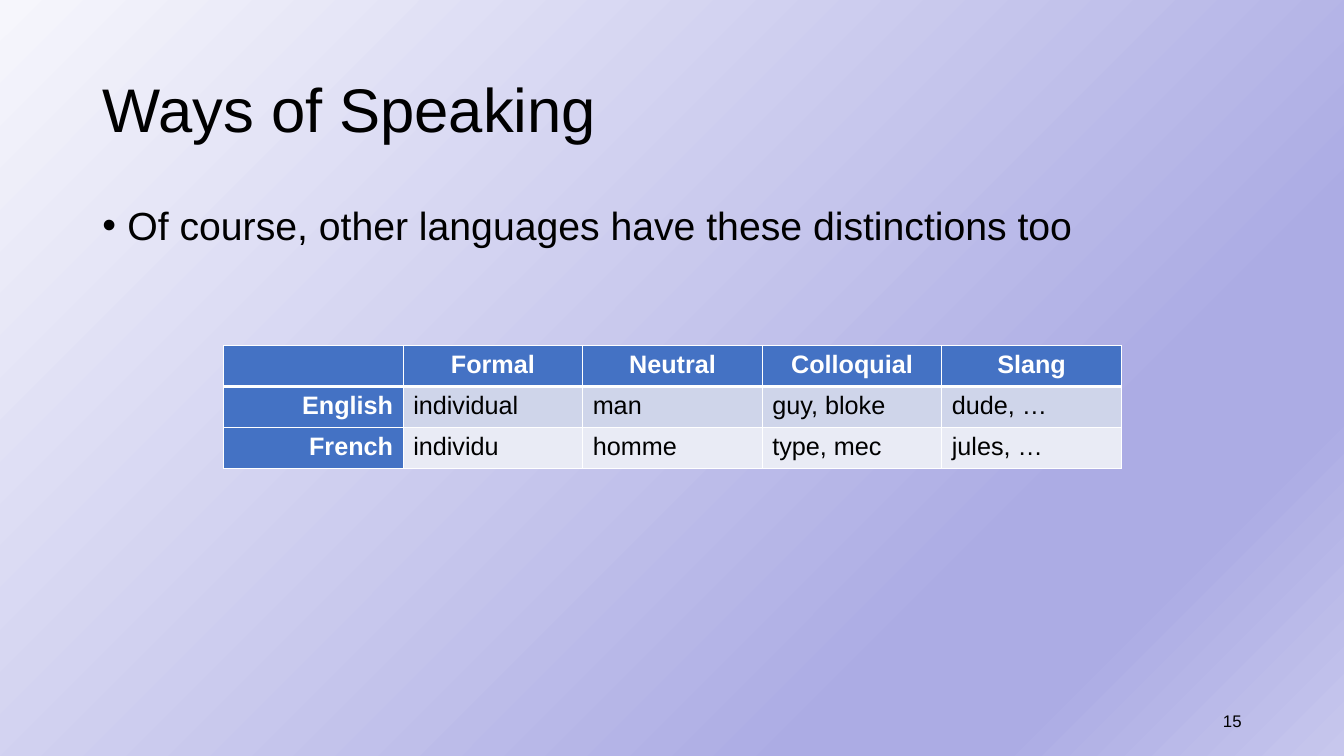
from lxml import etree
from pptx import Presentation
from pptx.dml.color import RGBColor
from pptx.enum.text import MSO_ANCHOR, PP_ALIGN
from pptx.oxml.ns import qn
from pptx.util import Pt

PX = 9525  # EMU per px, 96 px to the inch
LEFT, CENTER, RIGHT = PP_ALIGN.LEFT, PP_ALIGN.CENTER, PP_ALIGN.RIGHT
TOP, MIDDLE = MSO_ANCHOR.TOP, MSO_ANCHOR.MIDDLE

BLACK = RGBColor(0x00, 0x00, 0x00)
WHITE = RGBColor(0xFF, 0xFF, 0xFF)
BLUE = RGBColor(0x44, 0x72, 0xC4)
BAND_DARK = RGBColor(0xCF, 0xD5, 0xEA)
BAND_LIGHT = RGBColor(0xE9, 0xEB, 0xF5)
MIST = RGBColor(0xF6, 0xF6, 0xFC)
LILAC = RGBColor(0xAC, 0xAC, 0xE4)
PALE_LILAC = RGBColor(0xC7, 0xC7, 0xED)


def write(tf, text, size, color=BLACK, bold=False, align=LEFT, spacing=None):
    p = tf.paragraphs[0]
    p.alignment = align
    p.line_spacing = spacing
    r = p.add_run()
    r.text = text
    r.font.name = "Arial"
    r.font.size = Pt(size)
    r.font.bold = bold
    r.font.color.rgb = color
    return p


def add_text(box, text, size, anchor=TOP, **fmt):
    tf = s.shapes.add_textbox(*(v * PX for v in box)).text_frame
    tf.word_wrap = True
    tf.vertical_anchor = anchor
    return write(tf, text, size, **fmt)


prs = Presentation()
prs.slide_width, prs.slide_height = 1280 * PX, 720 * PX
s = prs.slides.add_slide(prs.slide_layouts[6])

# Background gradient
fill = s.background.fill
fill.gradient()
fill.gradient_angle = 315
stops = s.element.find(".//" + qn("a:gsLst"))
for stop in list(stops):
    stops.remove(stop)
for pos, color in [(0, MIST), (74, LILAC), (83, LILAC), (100, PALE_LILAC)]:
    stop = etree.SubElement(stops, qn("a:gs"), pos=str(pos * 1000))
    etree.SubElement(stop, qn("a:srgbClr"), val=str(color))

# Title, bullet and page number
add_text((88, 38, 1104, 139), "Ways of Speaking", 44, MIDDLE, spacing=0.9)
p = add_text((88, 192, 1104, 58),
             "Of course, other languages have these distinctions too", 28,
             spacing=0.9)
p.space_before = Pt(10)
pPr = p._p.get_or_add_pPr()
pPr.set("marL", str(24 * PX))
pPr.set("indent", str(-24 * PX))
etree.SubElement(pPr, qn("a:buFont"), typeface="Arial")
etree.SubElement(pPr, qn("a:buChar"), char="•")
add_text((904, 667, 288, 38), "15", 12, MIDDLE, align=RIGHT)

# Table of registers
rows = [
    ["", "Formal", "Neutral", "Colloquial", "Slang"],
    ["English", "individual", "man", "guy, bloke", "dude, …"],
    ["French", "individu", "homme", "type, mec", "jules, …"],
]
bands = [BLUE, BAND_DARK, BAND_LIGHT]
COL_W, ROW_H = 171, 39
n_rows, n_cols = len(rows), len(rows[0])
table = s.shapes.add_table(n_rows, n_cols, 213 * PX, 329 * PX,
                           n_cols * COL_W * PX, n_rows * ROW_H * PX).table
for i, row in enumerate(rows):
    for j, text in enumerate(row):
        cell = table.cell(i, j)
        tcPr = cell._tc.get_or_add_tcPr()
        for side in "LRTB":
            thick = (i, side) in [(0, "B"), (1, "T")]
            ln = etree.SubElement(tcPr, qn("a:ln" + side),
                                  w=str(Pt(3 if thick else 1)))
            line_fill = etree.SubElement(ln, qn("a:solidFill"))
            etree.SubElement(line_fill, qn("a:srgbClr"), val=str(WHITE))
        header = i == 0 or j == 0
        cell.fill.solid()
        cell.fill.fore_color.rgb = BLUE if header else bands[i]
        if text:
            write(cell.text_frame, text, 18, WHITE if header else BLACK, header,
                  CENTER if i == 0 else RIGHT if j == 0 else LEFT)

prs.save("out.pptx")
